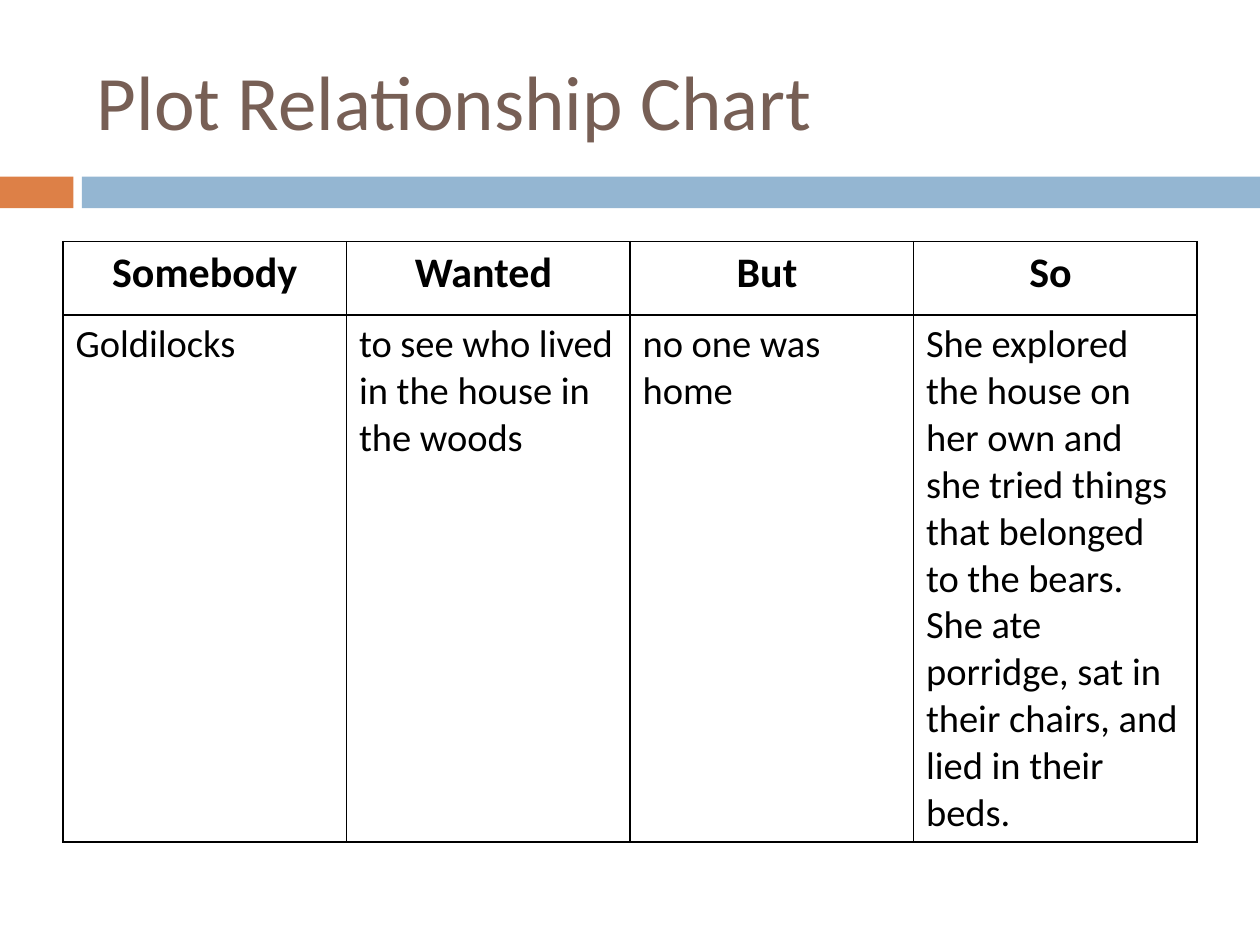
from lxml import etree
from pptx import Presentation
from pptx.dml.color import RGBColor
from pptx.enum.shapes import MSO_SHAPE
from pptx.enum.text import MSO_ANCHOR, PP_ALIGN
from pptx.oxml.ns import qn
from pptx.util import Cm, Pt

RECTANGLE = MSO_SHAPE.RECTANGLE
MIDDLE, TOP = MSO_ANCHOR.MIDDLE, MSO_ANCHOR.TOP
LEFT, CENTER = PP_ALIGN.LEFT, PP_ALIGN.CENTER
FONT = "Calibri"
COLORS = {"title": "775F55", "accent": "DD8047", "band": "94B6D2",
          "text": "000000", "border": "000000"}
PLOT_ROWS = [
    ["Somebody", "Wanted ", "But ", "So "],
    ["Goldilocks",
     "to see who lived in the house in the woods",
     "no one was home",
     "She explored the house on her own and she tried things that belonged "
     "to the bears. She ate porridge, sat in their chairs, and lied in their beds."],
]


def write_text(frame, text, size, color="text", bold=False, align=LEFT, anchor=TOP):
    """Write one formatted paragraph into a text frame."""
    frame.word_wrap = True
    frame.vertical_anchor = anchor
    para = frame.paragraphs[0]
    para.alignment = align
    span = para.add_run()
    span.text = text
    span.font.name = FONT
    span.font.size = Pt(size)
    span.font.bold = bold
    span.font.color.rgb = RGBColor.from_string(COLORS[color])


def add_title(page, left, top, width, height):
    """Place the page title."""
    box = page.shapes.add_textbox(Cm(left), Cm(top), Cm(width), Cm(height))
    write_text(box.text_frame, "Plot Relationship Chart", 44, color="title", anchor=MIDDLE)


def add_divider(page, left, top, width, height, accent_width=1.48, gap=0.17):
    """Place the accent block and the band that fills the remaining width."""
    band_offset = accent_width + gap
    parts = [("accent", 0, accent_width), ("band", band_offset, width - band_offset)]
    for color, offset, part_width in parts:
        bar = page.shapes.add_shape(RECTANGLE, Cm(left + offset), Cm(top),
                                    Cm(part_width), Cm(height))
        bar.shadow.inherit = False
        bar.fill.solid()
        bar.fill.fore_color.rgb = RGBColor.from_string(COLORS[color])
        bar.line.fill.background()


def set_borders(cell):
    """Draw a thin line on all four sides of a cell."""
    properties = cell._tc.get_or_add_tcPr()
    for index, side in enumerate(("a:lnL", "a:lnR", "a:lnT", "a:lnB")):
        line = etree.Element(qn(side), w=str(Pt(1)))
        fill = etree.SubElement(line, qn("a:solidFill"))
        etree.SubElement(fill, qn("a:srgbClr"), val=COLORS["border"])
        properties.insert(index, line)


def add_plot_table(page, left, top, width, height, header_height=1.48):
    """Place the plot table with equal columns and a header row."""
    table = page.shapes.add_table(len(PLOT_ROWS), len(PLOT_ROWS[0]), Cm(left), Cm(top),
                                  Cm(width), Cm(height)).table
    table.first_row = False
    table.horz_banding = False
    for row, row_height in zip(table.rows, (header_height, height - header_height)):
        row.height = Cm(row_height)
    styles = [{"size": 24, "bold": True, "align": CENTER}, {"size": 22}]
    for row, texts, style in zip(table.rows, PLOT_ROWS, styles):
        for cell, text in zip(row.cells, texts):
            cell.fill.background()
            set_borders(cell)
            write_text(cell.text_frame, text, **style)


def main():
    """Build and save the deck."""
    deck = Presentation()
    deck.slide_width, deck.slide_height = Cm(25.4), Cm(19.05)
    page = deck.slides.add_slide(deck.slide_layouts[6])
    add_divider(page, 0, 3.56, 25.4, 0.64)
    add_title(page, 1.7, 0.64, 22.66, 2.74)
    add_plot_table(page, 1.27, 4.87, 22.86, 12.1)
    deck.save("out.pptx")


if __name__ == "__main__":
    main()
